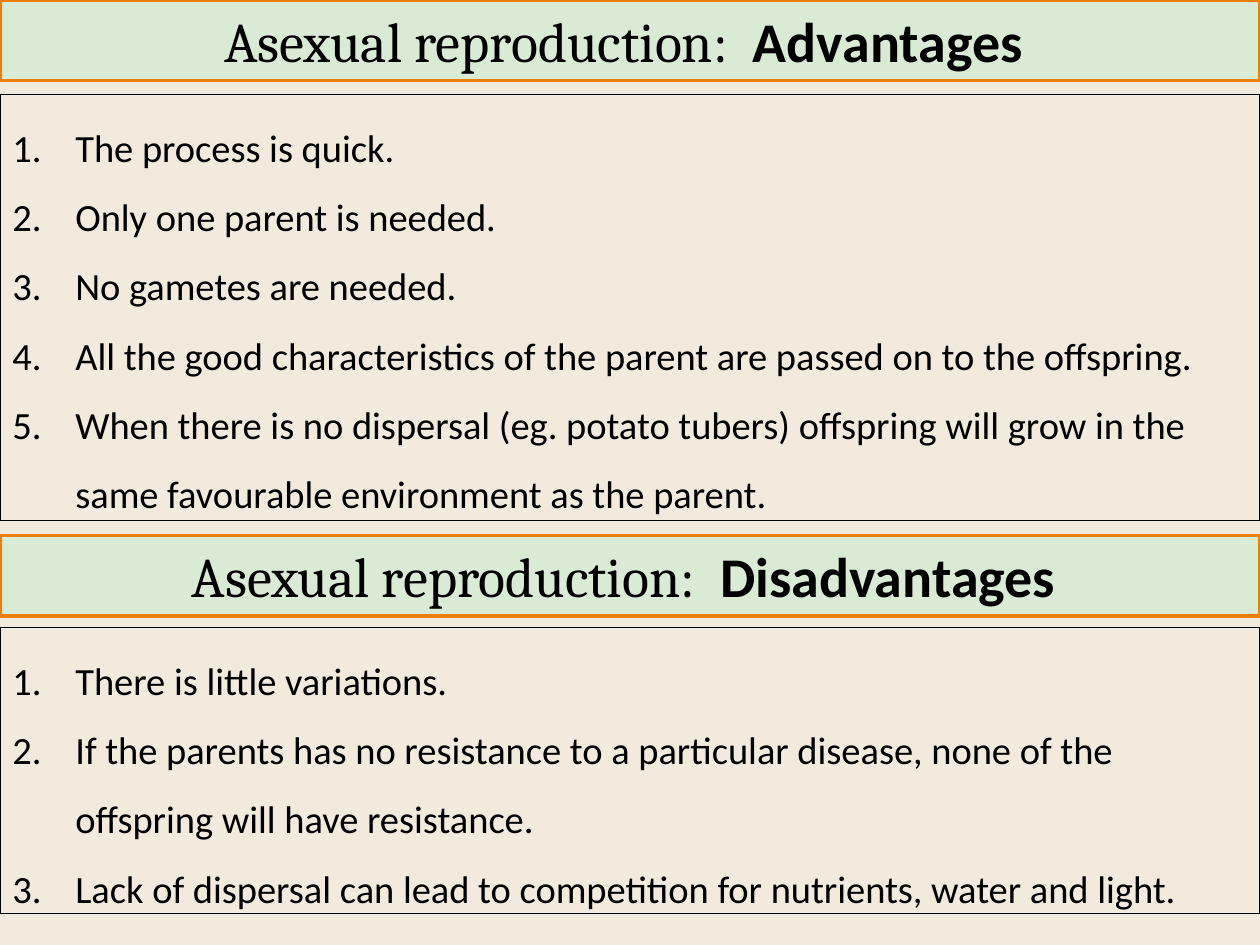
import pptx
import pptx.util
import pptx.dml.color
import pptx.enum.text
import pptx.oxml
import pptx.oxml.ns

Pt = pptx.util.Pt
RGB = pptx.dml.color.RGBColor.from_string
COLORS = {"page": "F3EADE", "banner": "D9EAD5", "accent": "F07F09", "ink": "000000"}

deck = pptx.Presentation()
deck.slide_width, deck.slide_height = Pt(720), Pt(540)
slide = deck.slides.add_slide(deck.slide_layouts[6])
slide.background.fill.solid()
slide.background.fill.fore_color.rgb = RGB(COLORS["page"])


def add_panel(top, height, border, border_width):
    panel = slide.shapes.add_textbox(0, Pt(top), deck.slide_width, Pt(height))
    panel.line.color.rgb = RGB(COLORS[border])
    panel.line.width = Pt(border_width)
    panel.text_frame.word_wrap = True
    panel.text_frame.auto_size = pptx.enum.text.MSO_AUTO_SIZE.SHAPE_TO_FIT_TEXT
    return panel


def add_run(paragraph, text, font, size, bold=False):
    run = paragraph.add_run()
    run.text = text
    run.font.name = font
    run.font.size = Pt(size)
    run.font.bold = bold
    run.font.color.rgb = RGB(COLORS["ink"])


sections = [
    ("Advantages", 0, 54, 243.4, [
        "The process is quick.",
        "Only one parent is needed.",
        "No gametes are needed.",
        "All the good characteristics of the parent are passed on to the offspring.",
        "When there is no dispersal (eg. potato tubers) offspring will grow in the "
        "same favourable environment as the parent.",
    ]),
    ("Disadvantages", 306, 358.6, 163.4, [
        "There is little variations.",
        "If the parents has no resistance to a particular disease, none of the "
        "offspring will have resistance.",
        "Lack of dispersal can lead to competition for nutrients, water and light.",
    ]),
]

for topic, banner_top, list_top, list_height, points in sections:
    banner = add_panel(banner_top, 46, "accent", 2)
    banner.fill.solid()
    banner.fill.fore_color.rgb = RGB(COLORS["banner"])
    heading = banner.text_frame.paragraphs[0]
    heading.alignment = pptx.enum.text.PP_ALIGN.CENTER
    add_run(heading, "Asexual reproduction: ", "Cambria", 32)
    add_run(heading, f" {topic} ", "Calibri", 32, bold=True)

    frame = add_panel(list_top, list_height, "ink", 0.75).text_frame
    for index, point in enumerate(points):
        item = frame.add_paragraph() if index else frame.paragraphs[0]
        item.line_spacing = 1.5
        properties = item._p.get_or_add_pPr()
        properties.set("marL", str(Pt(36)))
        properties.set("indent", str(-Pt(36)))
        namespace = pptx.oxml.ns.nsdecls("a")
        properties.append(pptx.oxml.parse_xml(f'<a:buFont {namespace} typeface="+mj-lt"/>'))
        properties.append(pptx.oxml.parse_xml(f'<a:buAutoNum {namespace} type="arabicPeriod"/>'))
        add_run(item, point, "Calibri", 22)

deck.save("out.pptx")
